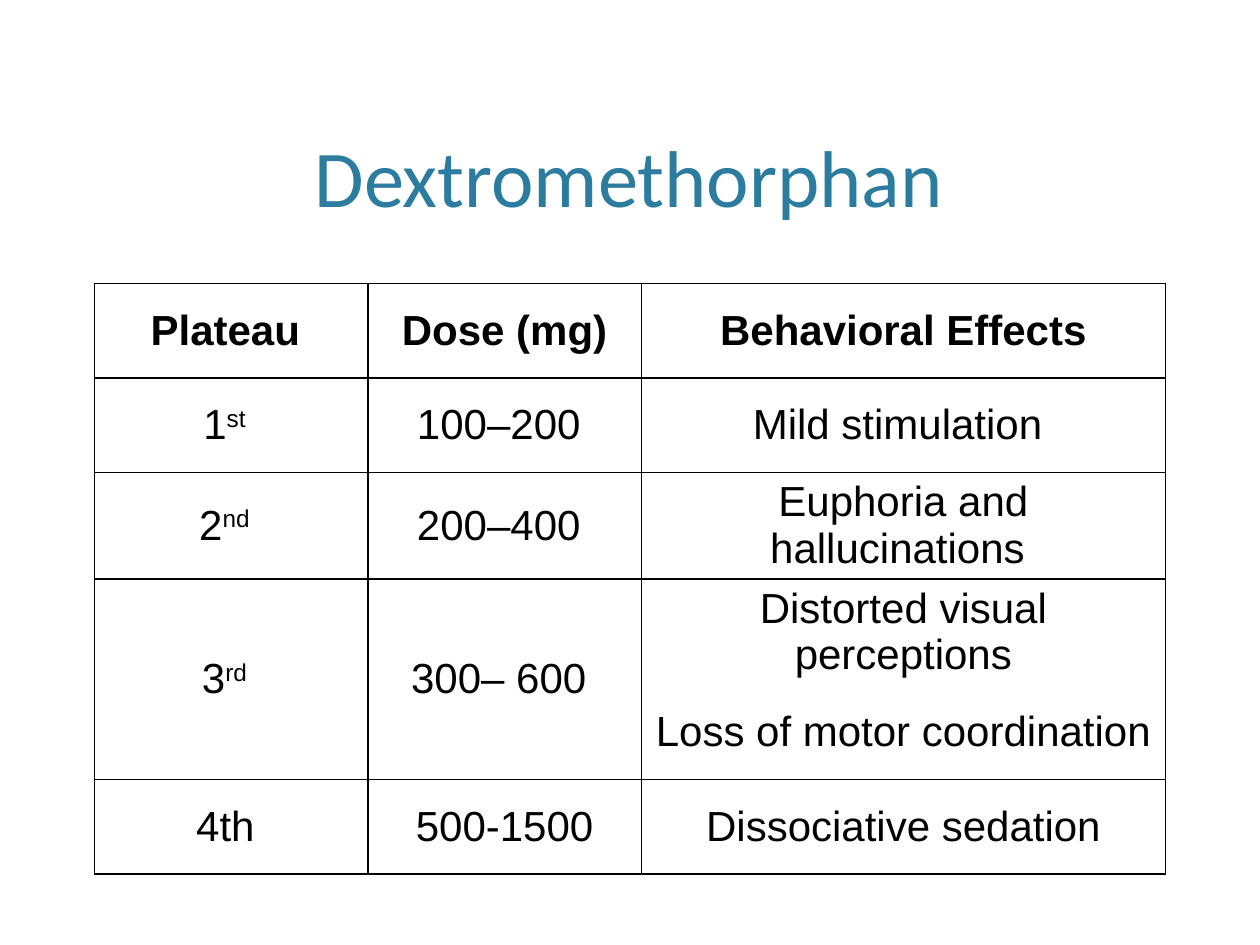
from lxml import etree
from pptx import Presentation, util as u
from pptx.dml.color import RGBColor
from pptx.enum import text
from pptx.oxml.ns import qn

COLORS = {"title": "2C7C9F", "ink": "000000"}
TITLE_FONT = {"name": "Calibri", "size": u.Pt(46), "bold": False}
BODY_FONT = {"name": "Arial", "size": u.Pt(24), "bold": False}
HEADER_FONT = {**BODY_FONT, "bold": True}

# "^" separates an ordinal number from its raised ending.
DOSES = [
    ["Plateau ", "Dose (mg)", "Behavioral Effects"],
    ["1^st  ", "100–200 ", "Mild stimulation "],
    ["2^nd  ", "200–400 ", "Euphoria and hallucinations "],
    ["3^rd  ", "300– 600 ", "Distorted visual perceptions"],
    [None, None, "Loss of motor coordination "],
    ["4th ", "500-1500", "Dissociative sedation"],
]
COLUMN_SHARES = [0.217, 0.217, 0.416]
ROW_SHARE = 0.1
THIRD_PLATEAU = 3


class SlideBuilder:
    """Places elements by shares of the slide's width and height."""

    def __init__(self):
        self.deck = Presentation()
        self.deck.slide_width, self.deck.slide_height = u.Inches(10), u.Inches(7.5)
        self.slide = self.deck.slides.add_slide(self.deck.slide_layouts[5])

    def across(self, share):
        return round(self.deck.slide_width * share)

    def down(self, share):
        return round(self.deck.slide_height * share)

    def add_wording(self, paragraph, wording, font, color):
        paragraph.alignment = text.PP_ALIGN.CENTER
        for level, part in enumerate(wording.split("^")):
            run = paragraph.add_run()
            run.text = part
            for attribute, value in font.items():
                setattr(run.font, attribute, value)
            run.font.color.rgb = RGBColor.from_string(COLORS[color])
            if level:
                run.font._element.set("baseline", "30000")

    def title(self, wording, left, top, width, height):
        heading = self.slide.shapes.title
        heading.left, heading.top = self.across(left), self.down(top)
        heading.width, heading.height = self.across(width), self.down(height)
        heading.text_frame.vertical_anchor = text.MSO_ANCHOR.BOTTOM
        self.add_wording(heading.text_frame.paragraphs[0], wording, TITLE_FONT, "title")

    def border(self, cell, hidden):
        """Rule the four sides of a cell, leaving the hidden ones blank."""
        properties = cell._tc.get_or_add_tcPr()
        for side in "LRTB":
            line = etree.SubElement(properties, qn(f"a:ln{side}"), w=str(u.Pt(1)))
            if side in hidden:
                etree.SubElement(line, qn("a:noFill"))
            else:
                fill = etree.SubElement(line, qn("a:solidFill"))
                etree.SubElement(fill, qn("a:srgbClr"), val=COLORS["ink"])

    def table(self, rows, shares, left, top, row_share, open_sides):
        table = self.slide.shapes.add_table(
            len(rows), len(shares), self.across(left), self.down(top),
            self.across(sum(shares)), self.down(row_share * len(rows))).table
        table.first_row = table.horz_banding = False
        for column, share in zip(table.columns, shares):
            column.width = self.across(share)
        for r, row in enumerate(rows):
            table.rows[r].height = self.down(row_share)
            for c, wording in enumerate(row):
                cell = table.cell(r, c)
                self.border(cell, open_sides.get((r, c), ""))
                cell.fill.background()
                cell.vertical_anchor = text.MSO_ANCHOR.MIDDLE
                if wording is None:
                    table.cell(r - 1, c).merge(cell)
                else:
                    font = BODY_FONT if r else HEADER_FONT
                    self.add_wording(cell.text_frame.paragraphs[0], wording, font, "ink")


def main():
    builder = SlideBuilder()
    builder.title("Dextromethorphan", 0.073, 0.03, 0.852, 0.213)
    effects = len(COLUMN_SHARES) - 1
    builder.table(DOSES, COLUMN_SHARES, 0.075, 0.3, ROW_SHARE,
                  {(THIRD_PLATEAU, effects): "B", (THIRD_PLATEAU + 1, effects): "T"})
    builder.deck.save("out.pptx")


if __name__ == "__main__":
    main()
